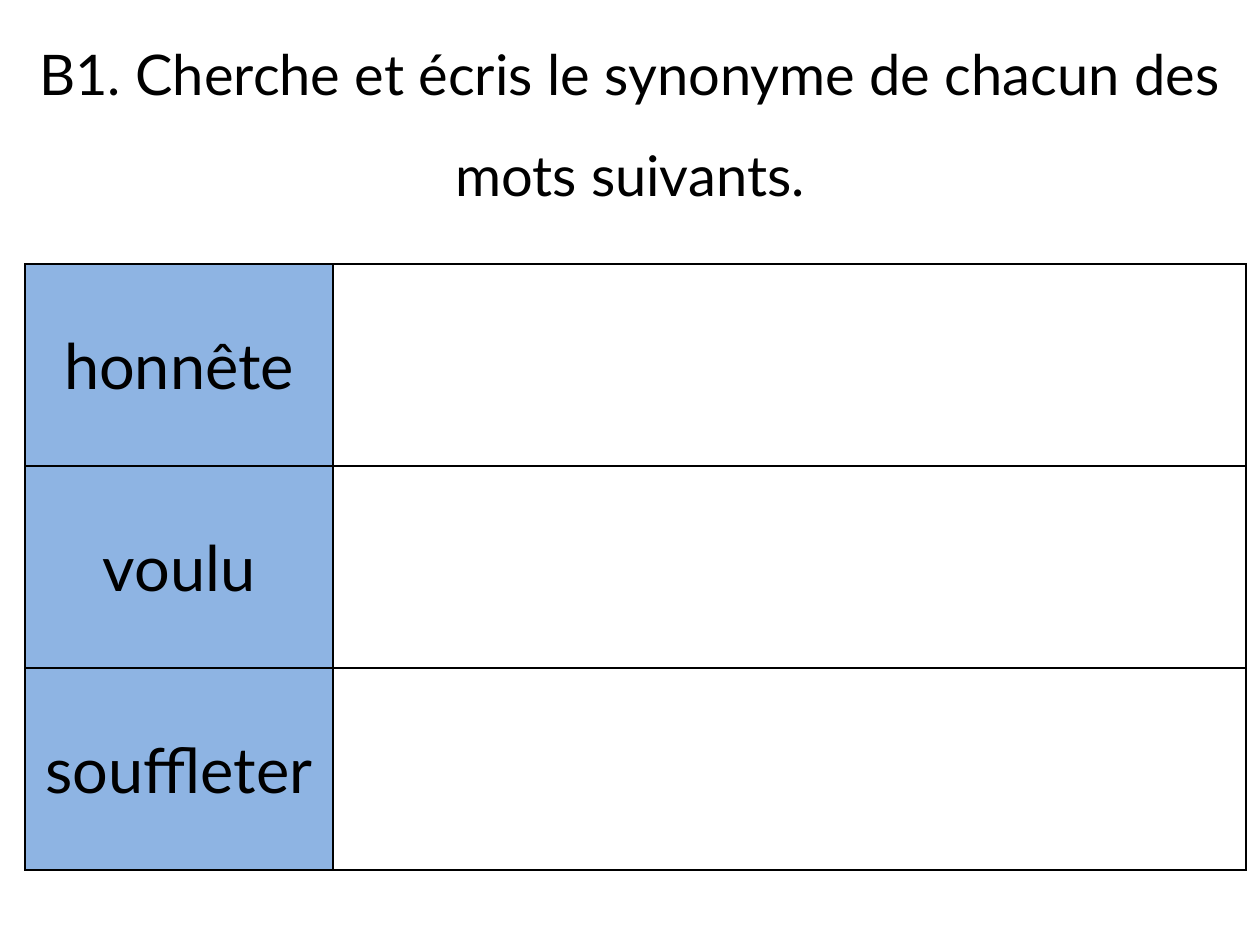
from lxml.etree import SubElement
from pptx import Presentation
from pptx.dml.color import RGBColor
from pptx.enum.text import MSO_ANCHOR, MSO_AUTO_SIZE, PP_ALIGN
from pptx.oxml.ns import qn
from pptx.util import Pt

EMU_PER_PX = 914400 // 126
FONT = "Lato"
COLORS = {"ink": "000000", "word": "8EB4E3", "answer": "FFFFFF"}
INSTRUCTION = "B1. Cherche et écris le synonyme de chacun des mots suivants."
WORDS = ["honnête", "voulu", "souffleter"]
COLUMN_WIDTHS = [308, 913]
ROW_HEIGHT = 202


def px(length):
    return length * EMU_PER_PX


def rgb(name):
    return RGBColor.from_string(COLORS[name])


def write_centred(frame, text, size):
    paragraph = frame.paragraphs[0]
    paragraph.alignment = PP_ALIGN.CENTER
    run = paragraph.add_run()
    run.text = text
    run.font.name = FONT
    run.font.size = Pt(size)
    run.font.color.rgb = rgb("ink")
    return paragraph


def add_instruction(slide):
    title = slide.shapes.title
    title.left, title.top, title.width, title.height = 0, 0, px(1260), px(217)
    frame = title.text_frame
    frame.word_wrap = True
    frame.auto_size = MSO_AUTO_SIZE.SHAPE_TO_FIT_TEXT
    frame.vertical_anchor = MSO_ANCHOR.TOP
    write_centred(frame, INSTRUCTION, 32).line_spacing = 1.5


def format_cell(cell, fill):
    """Fill a cell and rule all four sides; borders must precede the fill in the XML."""
    properties = cell._tc.get_or_add_tcPr()
    for side in ("a:lnL", "a:lnR", "a:lnT", "a:lnB"):
        border = SubElement(properties, qn(side), w=str(Pt(1)))
        solid = SubElement(border, qn("a:solidFill"))
        SubElement(solid, qn("a:srgbClr"), val=COLORS["ink"])
    cell.fill.solid()
    cell.fill.fore_color.rgb = rgb(fill)
    cell.vertical_anchor = MSO_ANCHOR.MIDDLE


def add_synonym_table(slide):
    table = slide.shapes.add_table(
        len(WORDS), len(COLUMN_WIDTHS), px(25), px(264),
        px(sum(COLUMN_WIDTHS)), px(ROW_HEIGHT * len(WORDS)),
    ).table
    table.first_row = table.horz_banding = False
    for column, width in zip(table.columns, COLUMN_WIDTHS):
        column.width = px(width)
    for row, word in zip(table.rows, WORDS):
        row.height = px(ROW_HEIGHT)
        word_cell, answer_cell = row.cells
        format_cell(word_cell, "word")
        format_cell(answer_cell, "answer")
        write_centred(word_cell.text_frame, word, 36)


def main():
    presentation = Presentation()
    presentation.slide_width, presentation.slide_height = px(1260), px(945)
    slide = presentation.slides.add_slide(presentation.slide_layouts[5])
    add_instruction(slide)
    add_synonym_table(slide)
    presentation.save("out.pptx")


if __name__ == "__main__":
    main()
